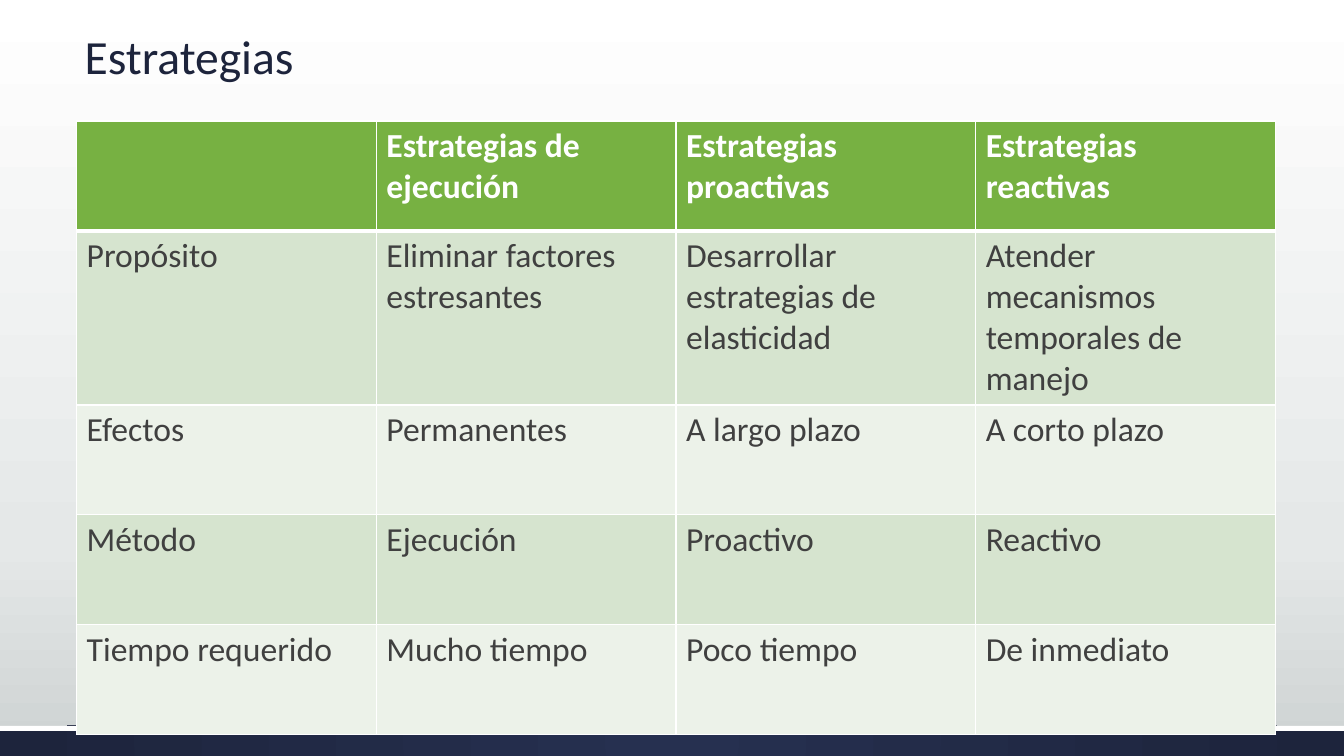
from dataclasses import dataclass

from lxml import etree
from pptx import Presentation
from pptx import util as u
from pptx.dml.color import RGBColor
from pptx.enum import shapes, text
from pptx.oxml import ns


@dataclass(frozen=True)
class Theme:
    font: str = "Calibri"
    title_size: int = 34
    table_size: int = 24
    navy: str = "1D243C"
    navy_light: str = "263050"
    white: str = "FFFFFF"
    body: str = "404040"
    header: str = "77B142"
    bands: tuple = ("D6E4CF", "ECF2E9")
    backdrop: tuple = ((0, "FFFFFF"), (72, "E5E8E8"), (100, "CDD2D2"))


THEME = Theme()
SLIDE_W, SLIDE_H = 13.33, 7.5
FOOTER_TOP = 7.2

ROWS = [
    ["", "Estrategias de ejecución", "Estrategias proactivas", "Estrategias reactivas"],
    ["Propósito", "Eliminar factores estresantes",
     "Desarrollar estrategias de elasticidad",
     "Atender mecanismos temporales de manejo"],
    ["Efectos", "Permanentes", "A largo plazo", "A corto plazo"],
    ["Método", "Ejecución", "Proactivo", "Reactivo"],
    ["Tiempo requerido", "Mucho tiempo", "Poco tiempo", "De inmediato"],
]
ROW_HEIGHTS = [1.09, 1.28, 1.09, 1.09, 1.09]


def add_xml(parent, tag, **attrs):
    return etree.SubElement(parent, ns.qn(tag), {k: str(v) for k, v in attrs.items()})


def write(tf, content, size, color, bold=False, spacing=None):
    p = tf.paragraphs[0]
    if spacing:
        p.line_spacing = spacing
    r = p.add_run()
    r.text = content
    r.font.name = THEME.font
    r.font.size = u.Pt(size)
    r.font.bold = bold
    r.font.color.rgb = RGBColor.from_string(color)


def set_gradient(fill, element, stops, radial=False):
    fill.gradient()
    grad = element.find(".//" + ns.qn("a:gradFill"))
    for child in list(grad):
        grad.remove(child)
    stop_list = add_xml(grad, "a:gsLst")
    for position, color in stops:
        stop = add_xml(stop_list, "a:gs", pos=position * 1000)
        add_xml(stop, "a:srgbClr", val=color)
    if radial:
        center = add_xml(grad, "a:path", path="circle")
        add_xml(center, "a:fillToRect", l=50000, t=50000, r=50000, b=50000)
    else:
        add_xml(grad, "a:lin", ang=90 * 60000, scaled=0)


def add_bar(s, height):
    sp = s.shapes.add_shape(
        shapes.MSO_SHAPE.RECTANGLE, 0, u.Inches(FOOTER_TOP),
        u.Inches(SLIDE_W), u.Inches(height))
    sp.shadow.inherit = False
    sp.line.fill.background()
    return sp


def add_footer(s):
    band = add_bar(s, 0.3)
    set_gradient(band.fill, band.element,
                 ((0, THEME.navy_light), (100, THEME.navy)), radial=True)
    rule = add_bar(s, 0.05)
    rule.fill.solid()
    rule.fill.fore_color.rgb = RGBColor.from_string(THEME.white)


def add_title(s, content):
    title = s.shapes.title
    title.left, title.top = u.Inches(0.74), u.Inches(0.17)
    title.width, title.height = u.Inches(10.4), u.Inches(0.72)
    tf = title.text_frame
    tf.word_wrap = True
    tf.auto_size = text.MSO_AUTO_SIZE.NONE
    tf.vertical_anchor = text.MSO_ANCHOR.BOTTOM
    tf.paragraphs[0].alignment = text.PP_ALIGN.LEFT
    write(tf, content, THEME.title_size, THEME.navy, spacing=0.9)


def set_borders(cell, top=1, bottom=1):
    tc_pr = cell._tc.get_or_add_tcPr()
    for side, width in (("L", 1), ("R", 1), ("T", top), ("B", bottom)):
        line = add_xml(tc_pr, "a:ln" + side, w=u.Pt(width))
        add_xml(add_xml(line, "a:solidFill"), "a:srgbClr", val=THEME.white)


def add_strategy_table(s):
    table = s.shapes.add_table(
        len(ROWS), len(ROWS[0]), u.Inches(0.76), u.Inches(1.2),
        u.Inches(11.89), u.Inches(sum(ROW_HEIGHTS))).table
    for i, (row, height) in enumerate(zip(ROWS, ROW_HEIGHTS)):
        is_header = i == 0
        table.rows[i].height = u.Inches(height)
        fill = THEME.header if is_header else THEME.bands[(i - 1) % 2]
        color = THEME.white if is_header else THEME.body
        for j, content in enumerate(row):
            cell = table.cell(i, j)
            set_borders(cell, top=3 if i == 1 else 1, bottom=3 if is_header else 1)
            cell.fill.solid()
            cell.fill.fore_color.rgb = RGBColor.from_string(fill)
            if content:
                write(cell.text_frame, content, THEME.table_size, color, bold=is_header)


def main():
    prs = Presentation()
    prs.slide_width, prs.slide_height = u.Inches(SLIDE_W), u.Inches(SLIDE_H)
    s = prs.slides.add_slide(prs.slide_layouts.get_by_name("Title Only"))

    # Backdrop and footer
    set_gradient(s.background.fill, s.element, THEME.backdrop)
    add_footer(s)

    # Content
    add_title(s, "Estrategias")
    add_strategy_table(s)

    prs.save("out.pptx")


if __name__ == "__main__":
    main()
